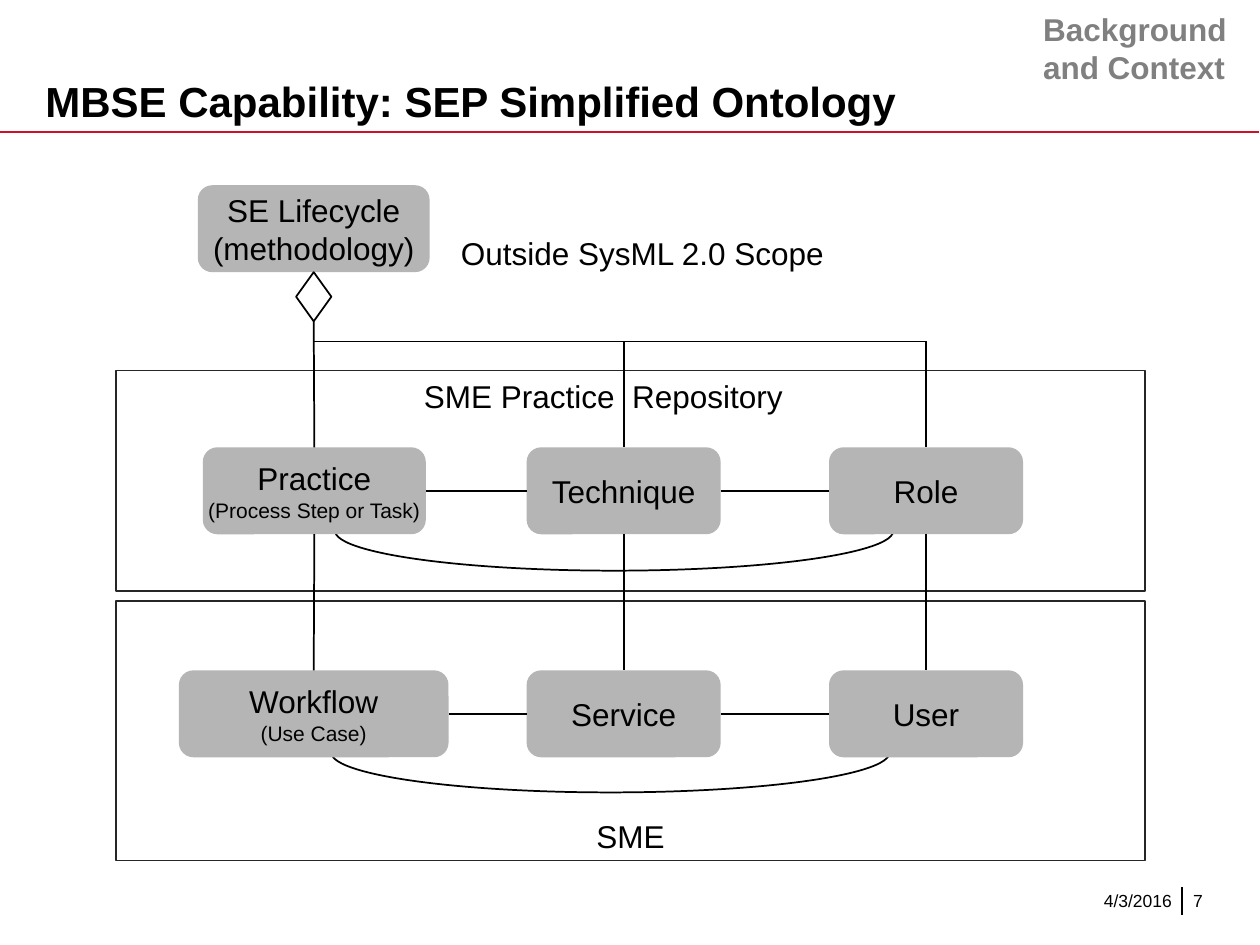
"""Build the simplified ontology slide with python-pptx."""
from lxml import etree
from pptx import Presentation
from pptx.dml.color import RGBColor
from pptx.enum.shapes import MSO_CONNECTOR, MSO_SHAPE
from pptx.enum.text import MSO_ANCHOR, MSO_AUTO_SIZE, PP_ALIGN
from pptx.oxml.ns import qn
from pptx.util import Pt

SCALE = 9144
COLOURS = {"text": "000000", "rule": "CE1126", "panel": "FFFFFF",
           "panel_edge": "262626", "node": "B5B5B5", "tag": "808080"}
STRAIGHT = MSO_CONNECTOR.STRAIGHT
RECT, ROUNDED = MSO_SHAPE.RECTANGLE, MSO_SHAPE.ROUNDED_RECTANGLE
DIAMOND, ARC = MSO_SHAPE.FLOWCHART_DECISION, MSO_SHAPE.ARC
LEFT, CENTER, RIGHT = PP_ALIGN.LEFT, PP_ALIGN.CENTER, PP_ALIGN.RIGHT
TOP, MIDDLE, BOTTOM = MSO_ANCHOR.TOP, MSO_ANCHOR.MIDDLE, MSO_ANCHOR.BOTTOM
TOP_SIDE, LEFT_SIDE, BOTTOM_SIDE, RIGHT_SIDE = range(4)


def emu(*lengths):
    return [length * SCALE for length in lengths]


def colour(name):
    return RGBColor.from_string(COLOURS[name])


class Slide:
    def __init__(self, deck):
        self.page = deck.slides.add_slide(deck.slide_layouts[5])
        self.shapes = self.page.shapes

    def set_text(self, box, lines, align=LEFT, anchor=TOP, wrap=True,
                 insets=(10, 5, 10, 5), ink="text", bold=False):
        frame = box.text_frame
        frame.auto_size = MSO_AUTO_SIZE.NONE
        frame.word_wrap = wrap
        frame.vertical_anchor = anchor
        (frame.margin_left, frame.margin_top,
         frame.margin_right, frame.margin_bottom) = emu(*insets)
        for index, (text, size) in enumerate(lines):
            para = frame.add_paragraph() if index else frame.paragraphs[0]
            para.text = text
            para.alignment = align
            para.font.name = "Arial"
            para.font.size = Pt(size)
            para.font.bold = bold
            para.font.color.rgb = colour(ink)

    def title(self, text, at):
        box = self.shapes.title
        box.left, box.top, box.width, box.height = emu(*at)
        self.set_text(box, [(text, 24)], anchor=BOTTOM, bold=True)

    def label(self, text, size, at, **style):
        box = self.shapes.add_textbox(*emu(*at))
        self.set_text(box, [(text, size)], **style)

    def shape(self, kind, at, fill=None, edge=None):
        box = self.shapes.add_shape(kind, *emu(*at))
        box.shadow.inherit = False
        if fill:
            box.fill.solid()
            box.fill.fore_color.rgb = colour(fill)
        else:
            box.fill.background()
        if edge:
            box.line.color.rgb = colour(edge)
            box.line.width = Pt(1)
        else:
            box.line.fill.background()
        return box

    def panel(self, text, at, **style):
        box = self.shape(RECT, at, "panel", "panel_edge")
        self.set_text(box, [(text, 18)], align=CENTER, wrap=False, **style)

    def node(self, lines, centre, top, width):
        box = self.shape(ROUNDED, (centre - width // 2, top, width, 69), "node")
        self.set_text(box, lines, align=CENTER, anchor=MIDDLE, wrap=False)
        return box

    def arc(self, at):
        box = self.shape(ARC, at, edge="text")
        box.adjustments[0] = 108.14
        box.adjustments[1] = 0
        box.element.spPr.xfrm.set("flipV", "1")

    def line(self, start, end, ink="text"):
        connector = self.shapes.add_connector(STRAIGHT, *emu(*start, *end))
        connector.line.color.rgb = colour(ink)
        connector.line.width = Pt(1)
        etree.SubElement(connector.element.spPr, qn("a:effectLst"))
        return connector

    def join(self, first, first_side, second, second_side):
        connector = self.line((0, 0), (0, 0))
        connector.begin_connect(first, first_side)
        connector.end_connect(second, second_side)


def main():
    deck = Presentation()
    deck.slide_width, deck.slide_height = emu(1000, 750)
    slide = Slide(deck)

    slide.line((0, 105), (999, 105), "rule")
    slide.line((938, 704), (938, 726))
    slide.title("MBSE Capability: SEP Simplified Ontology", (26, 30, 843, 75))
    slide.label("4/3/2016", 10, (697, 695, 233, 40), align=RIGHT,
                anchor=MIDDLE, insets=(10, 5, 0, 5))
    slide.label("7", 10, (947, 695, 46, 40), anchor=MIDDLE, insets=(0, 5, 0, 5))
    slide.label("Background and Context", 18, (818, 3, 182, 71),
                ink="tag", bold=True)

    slide.panel("SME", (92, 477, 817, 206), anchor=BOTTOM)
    slide.panel("SME Practice  Repository", (92, 294, 817, 175),
                insets=(10, 5, 53, 5))
    slide.arc((263, 566, 443, 63))
    slide.arc((266, 390, 443, 63))

    columns = (249, 495, 735)
    rows = [
        (355, [([("Practice", 18), ("(Process Step or Task)", 12)], 177),
               ([("Technique", 18)], 154), ([("Role", 18)], 154)]),
        (532, [([("Workflow", 18), ("(Use Case)", 12)], 214),
               ([("Service", 18)], 154), ([("User", 18)], 154)]),
    ]
    grid = [[slide.node(lines, centre, top, width)
             for centre, (lines, width) in zip(columns, cells)]
            for top, cells in rows]
    slide.node([("SE Lifecycle", 18), ("(methodology)", 18)],
               columns[0], 147, 184)
    slide.label("Outside SysML 2.0 Scope", 18, (356, 181, 311, 40), wrap=False)

    for upper, lower in zip(*grid):
        slide.join(upper, BOTTOM_SIDE, lower, TOP_SIDE)
    for row in grid:
        for first, second in zip(row, row[1:]):
            slide.join(first, RIGHT_SIDE, second, LEFT_SIDE)

    diamond = slide.shape(DIAMOND, (columns[0] - 14, 216, 28, 39),
                          "panel", "text")
    slide.join(diamond, BOTTOM_SIDE, grid[0][0], TOP_SIDE)
    branch = 271
    slide.line((columns[0], branch), (columns[-1], branch))
    for centre, box in zip(columns[1:], grid[0][1:]):
        drop = slide.line((centre, branch), (centre, 355))
        drop.end_connect(box, TOP_SIDE)

    deck.save("out.pptx")


if __name__ == "__main__":
    main()
